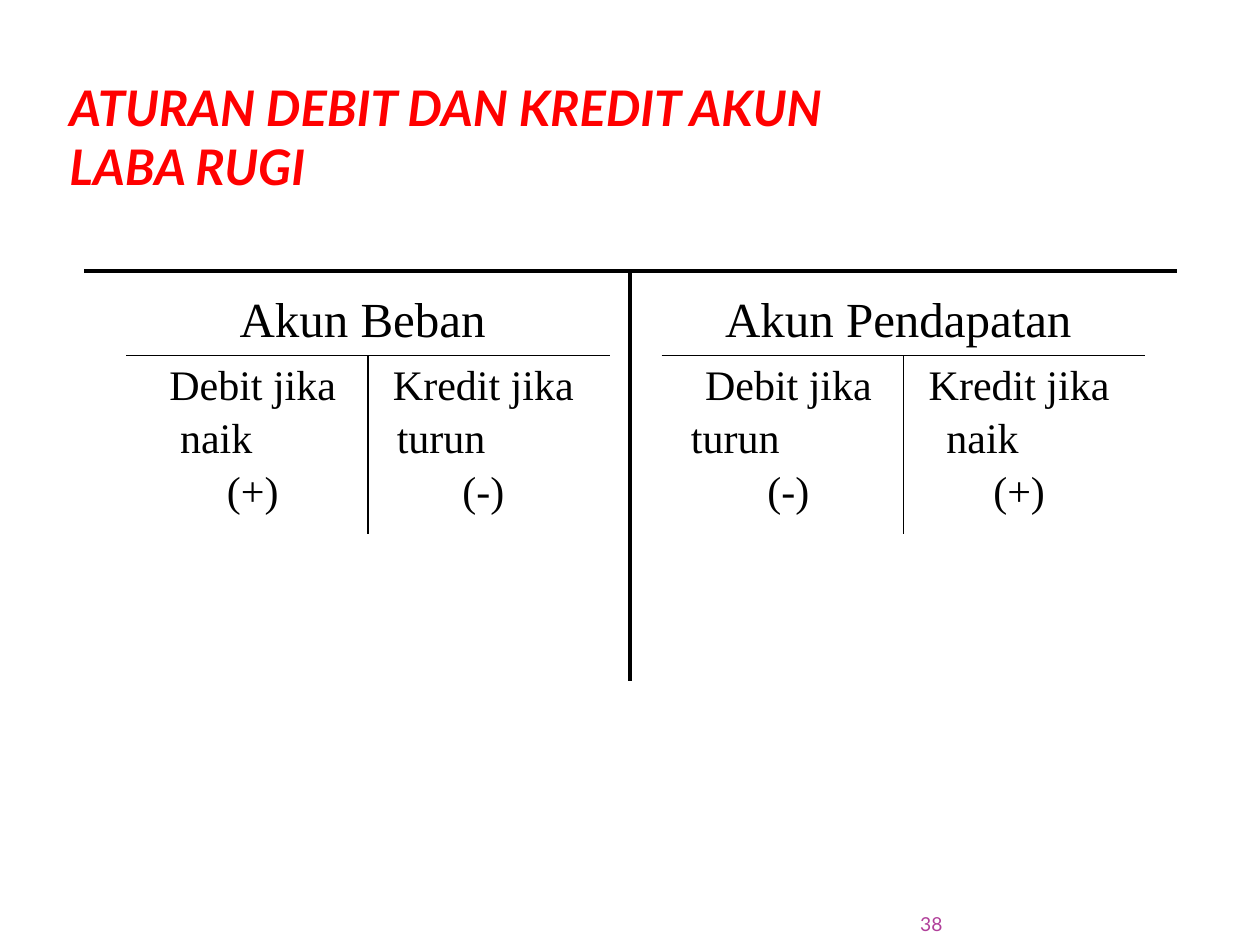
"""Build a slide on the debit and credit rules for income statement accounts."""
from lxml import etree
from pptx import Presentation
from pptx.dml.color import RGBColor
from pptx.enum import shapes, text
from pptx.oxml import ns
from pptx.util import Cm, Pt

BLACK = RGBColor(0x00, 0x00, 0x00)
RED = RGBColor(0xFF, 0x00, 0x00)
PURPLE = RGBColor(0xB1, 0x3F, 0x9A)
SERIF = "Times New Roman"
LEFT, CENTER, RIGHT = text.PP_ALIGN.LEFT, text.PP_ALIGN.CENTER, text.PP_ALIGN.RIGHT
MIDDLE, BOTTOM = text.MSO_ANCHOR.MIDDLE, text.MSO_ANCHOR.BOTTOM

prs = Presentation()
prs.slide_width, prs.slide_height = Cm(25.4), Cm(19.05)
s = prs.slides.add_slide(prs.slide_layouts[6])


def add_text(x, y, w, h, lines, size, font, color, anchor=MIDDLE, inset=(0.25, 0.13)):
    """Add a text box whose lines are (wording, alignment, left indent)."""
    sp = s.shapes.add_textbox(Cm(x), Cm(y), Cm(w), Cm(h))
    tf = sp.text_frame
    tf.word_wrap = True
    tf.vertical_anchor = anchor
    tf.margin_left = tf.margin_right = Cm(inset[0])
    tf.margin_top = tf.margin_bottom = Cm(inset[1])
    for i, (wording, align, indent) in enumerate(lines):
        p = tf.add_paragraph() if i else tf.paragraphs[0]
        p.alignment = align
        if i:
            p.space_before = Pt(1.5)
        if indent:
            p._p.get_or_add_pPr().set("marL", str(Cm(indent)))
        r = p.add_run()
        r.text = wording
        r.font.name, r.font.size = font, Pt(size)
        r.font.color.rgb = color
    return r


def add_line(x1, y1, x2, y2, width):
    """Add a plain black line."""
    c = s.shapes.add_connector(shapes.MSO_CONNECTOR.STRAIGHT, Cm(x1), Cm(y1), Cm(x2), Cm(y2))
    c.line.color.rgb = BLACK
    c.line.width = Pt(width)
    etree.SubElement(c._element.spPr, ns.qn("a:effectLst"))


r = add_text(1.27, 0.76, 16.84, 3.18, [("ATURAN DEBIT DAN KREDIT AKUN LABA RUGI", LEFT, 0)],
             28, "Lato", RED, BOTTOM, (0.13, 0))
r.font.bold = r.font.italic = True

add_line(1.7, 5.46, 23.72, 5.46, 2.25)
add_line(12.7, 5.46, 12.7, 13.72, 2.25)

accounts = [
    ("Akun Beban", 2.54, [("Debit jika", "naik", "(+)", 0.61), ("Kredit jika", "turun", "(-)", 0.33)]),
    ("Akun Pendapatan", 13.34, [("Debit jika", "turun", "(-)", 0.11), ("Kredit jika", "naik", "(+)", 0.61)]),
]
SIDE = 4.65
for name, x, rules in accounts:
    add_text(x - 0.41, 5.69, 10.36, 1.45, [(name, CENTER, 0)], 28, SERIF, BLACK)
    add_line(x, 7.16, x + 9.75, 7.16, 0.75)
    add_line(x + 4.88, 7.16, x + 4.88, 10.77, 0.75)
    for i, (entry, change, sign, indent) in enumerate(rules):
        lines = [(entry, CENTER, 0), (change, LEFT, indent), (sign, CENTER, 0)]
        add_text(x + 0.23 + i * SIDE, 7.16, SIDE, 3.3, lines, 24, SERIF, BLACK)

add_text(17.37, 18.21, 1.63, 0.64, [("38", RIGHT, 0)], 11, "Lato", PURPLE, BOTTOM, (0, 0))

prs.save("out.pptx")
